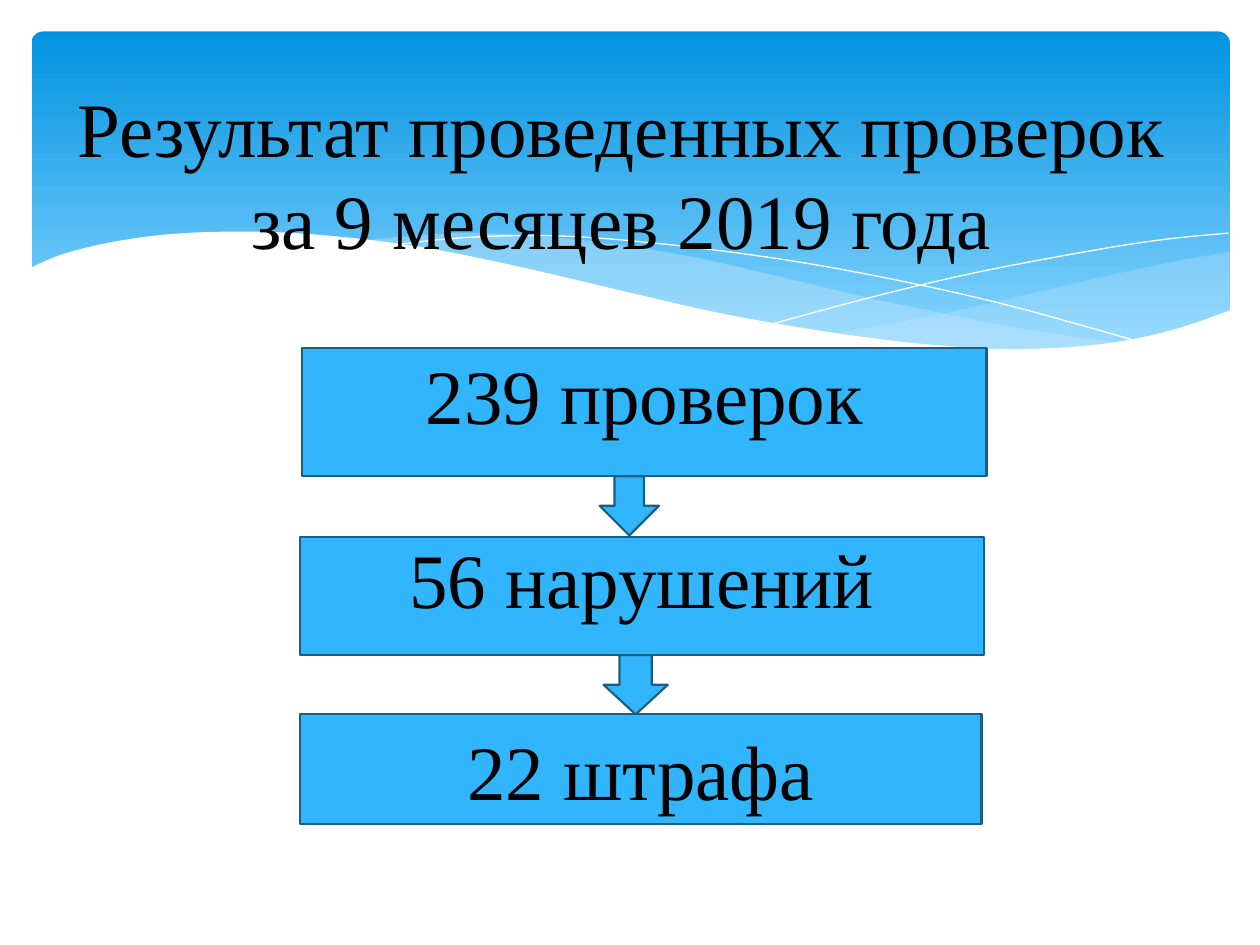
from lxml.etree import SubElement
from pptx import Presentation
from pptx.dml.color import RGBColor as Rgb
from pptx.enum.shapes import MSO_SHAPE as Kind
from pptx.enum.text import MSO_ANCHOR as Anchor, MSO_AUTO_SIZE as Fit, PP_ALIGN as Align
from pptx.oxml.ns import qn
from pptx.util import Inches, Pt

COLS, ROWS = 100, 75
WIDE, HIGH = Inches(10), Inches(7.5)
HUES = {
    "ink": "000000", "white": "FFFFFF", "box": "31B6FD", "edge": "195F84",
    "top": "0293E0", "low": "83D3FE", "mist": "C6E7FC",
}


def hue(name):
    return Rgb.from_string(HUES[name])


def col(n):
    return round(n * WIDE / COLS)


def row(n):
    return round(n * HIGH / ROWS)


def write(frame, text, size=44, font="Times New Roman", color="ink", pad=0.5):
    """Put centred text in a frame; pad is the bottom inset in rows."""
    frame.word_wrap = True
    frame.auto_size = Fit.NONE
    frame.vertical_anchor = Anchor.MIDDLE
    frame.margin_top, frame.margin_bottom = 0, row(pad)
    part = frame.paragraphs[0]
    part.alignment = Align.CENTER
    run = part.add_run()
    run.text = text
    run.font.size, run.font.name = Pt(size), font
    run.font.color.rgb = hue(color)


def bend(knots, steps=6):
    """Return points of a smooth curve through the knots."""
    ends = [knots[0], *knots, knots[-1]]
    dots = [knots[0]]
    for a, b, c, d in zip(ends, ends[1:], ends[2:], ends[3:]):
        for i in range(1, steps + 1):
            t = i / steps
            dots.append(tuple(
                (2 * q + (r - p) * t + (2 * p - 5 * q + 4 * r - s) * t**2
                 + (3 * q - p - 3 * r + s) * t**3) / 2
                for p, q, r, s in zip(a, b, c, d)))
    return dots


class Deck:
    def __init__(self):
        self.file = Presentation()
        self.file.slide_width, self.file.slide_height = WIDE, HIGH
        self.page = self.file.slides.add_slide(self.file.slide_layouts[5])
        self.shapes = self.page.shapes

    def shape(self, kind, x, y, w, h, fill="box", edge="edge"):
        item = self.shapes.add_shape(kind, col(x), row(y), col(w), row(h))
        self.paint(item, fill, edge)
        return item

    def paint(self, item, fill=None, edge=None, width=1.25, alpha=None):
        item.shadow.inherit = False
        if fill:
            item.fill.solid()
            item.fill.fore_color.rgb = hue(fill)
        else:
            item.fill.background()
        if edge:
            item.line.color.rgb = hue(edge)
            item.line.width = Pt(width)
        else:
            item.line.fill.background()
        if alpha:
            tone = item.fill._xPr.find(qn("a:solidFill"))[0]
            SubElement(tone, qn("a:alpha"), val=str(alpha * 1000))

    def panel(self, x, y, w, h):
        item = self.shape(Kind.ROUNDED_RECTANGLE, x, y, w, h, edge=None)
        item.adjustments[0] = 0.034
        item.fill.gradient()
        item.fill.gradient_angle = 270
        for stop, name, spot in zip(item.fill.gradient_stops, ("top", "low"), (0, 0.9)):
            stop.color.rgb, stop.position = hue(name), spot

    def curve(self, *parts, close=True, **look):
        dots = [(col(x), row(y)) for part in parts for x, y in bend(part)]
        pen = self.shapes.build_freeform(*dots[0])
        pen.add_line_segments(dots[1:], close=close)
        self.paint(pen.convert_to_shape(), **look)

    def title(self, text, x, y, w, h, pad):
        item = self.shapes.title
        item.left, item.top, item.width, item.height = col(x), row(y), col(w), row(h)
        write(item.text_frame, text, pad=pad)
        item.element.getparent().append(item.element)  # in front of the waves

    def box(self, text, x, y, w, h, pad):
        write(self.shape(Kind.RECTANGLE, x, y, w, h).text_frame, text, pad=pad)

    def arrow(self, x, y, w, h):
        self.shape(Kind.DOWN_ARROW, x, y, w, h)


def main():
    deck = Deck()

    # Blue header with waves
    deck.panel(2.5, 2.5, 95.1, 27)
    deck.curve(
        [(97.6, 20), (93.5, 20.7), (86.1, 22.3), (75.3, 24.8), (66.1, 26.5)],
        [(66.1, 26.5), (73.2, 27.4), (80.3, 27.8), (87.2, 27.4), (92.8, 26.3), (97.6, 24.7)],
        fill="mist", alpha=29)
    deck.curve(
        [(89.3, 27.3), (80.7, 26), (70.6, 24), (62.9, 22.2), (55.5, 20.5),
         (48.9, 19.4), (42, 18.7), (36.1, 18.5), (28.6, 19.1)],
        [(28.6, 19.1), (36.2, 20.3), (44.9, 22.2), (56.6, 24.8), (66.5, 26.6),
         (74.8, 27.6), (81.8, 27.8), (89.3, 27.3)],
        fill="mist", alpha=40)
    deck.curve(
        [(30.9, 19.5), (36.3, 18.9), (43.3, 18.7), (51, 19.2), (60.8, 20.4),
         (69.5, 21.9), (79.5, 24.1), (90.7, 27.2)],
        close=False, edge="white", width=0)
    deck.curve(
        [(61.3, 25.7), (69.5, 23.5), (77.6, 21.6), (86.6, 19.9), (92.4, 19), (97.5, 18.5)],
        close=False, edge="white", width=0)
    deck.curve(
        [(97.7, 24.6), (93, 26.2), (87.5, 27.3), (80.9, 27.7), (74.4, 27.4), (66.8, 26.5),
         (57.9, 25), (50.3, 23.3), (41.8, 21.3), (34, 19.7), (27.1, 18.8), (21.1, 18.4),
         (14.6, 18.5), (9.5, 19.1), (5.2, 20.1), (2.3, 21.3)],
        [(2.3, 32.9), (97.7, 32.9)],
        fill="white")

    # Title
    deck.title("Результат проведенных проверок за 9 месяцев 2019 года",
               4.3, -2.5, 90, 61.4, pad=29)

    # Results, top to bottom
    deck.box("239 проверок", 24, 27.6, 54.3, 10.2, pad=2.9)
    deck.arrow(47.6, 37.8, 4.7, 4.7)
    deck.box("56 нарушений", 23.8, 42.6, 54.3, 9.4, pad=2.9)
    deck.arrow(47.9, 52, 5.1, 4.7)
    deck.box("22 штрафа", 23.8, 56.7, 54.1, 8.7, pad=0)

    deck.file.save("out.pptx")


if __name__ == "__main__":
    main()
